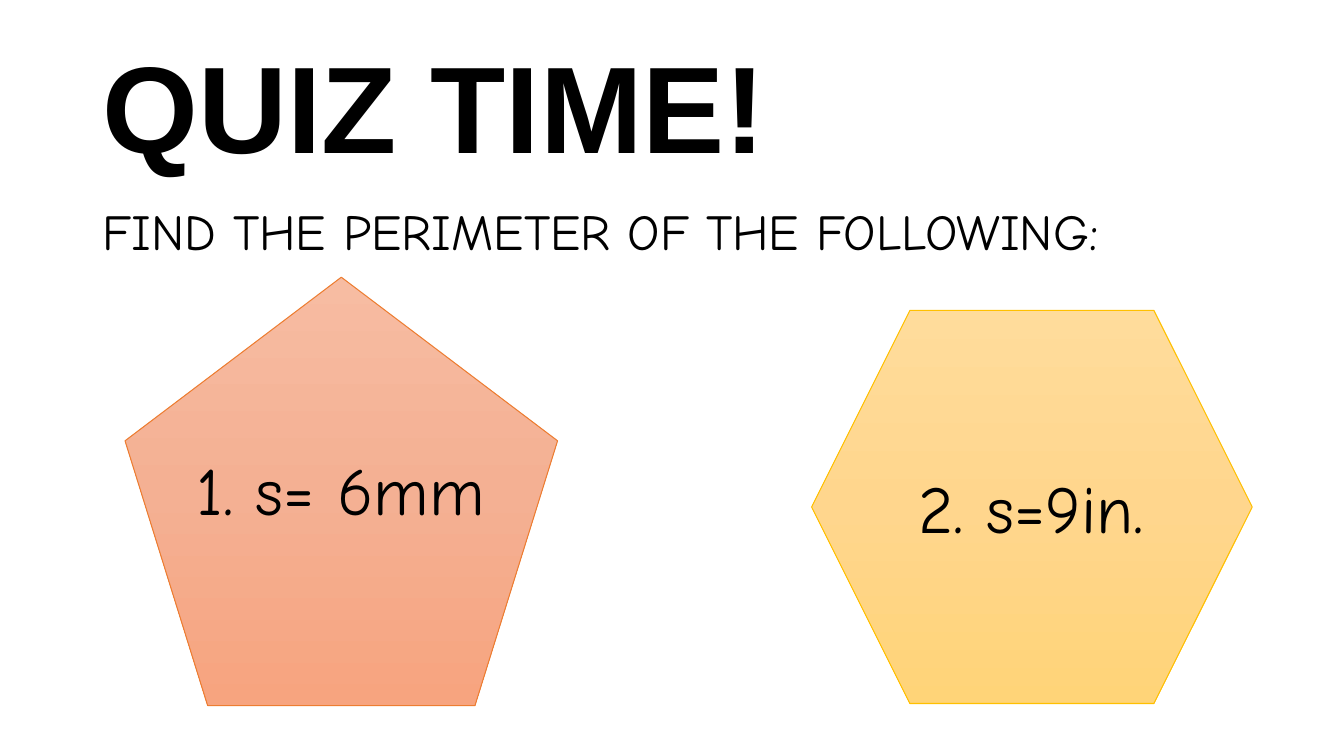
from copy import deepcopy

from pptx import Presentation
from pptx.dml.color import RGBColor
from pptx.enum.shapes import MSO_SHAPE as Shape
from pptx.enum.text import MSO_ANCHOR as Anchor, PP_ALIGN as Align
from pptx.oxml.ns import qn
from pptx.util import Inches, Pt


def color(hex_code):
    return RGBColor.from_string(hex_code)


def add_label(page, text, left, top, width, height, size, font="Comic Neue",
              bold=False, align=Align.LEFT, anchor=Anchor.TOP, spacing=1.0):
    box = page.shapes.add_textbox(Inches(left), Inches(top), Inches(width), Inches(height))
    frame = box.text_frame
    frame.word_wrap = True
    frame.vertical_anchor = anchor
    frame.text = text
    para = frame.paragraphs[0]
    para.alignment = align
    para.line_spacing = spacing
    span = para.runs[0]
    span.font.name = font
    span.font.size = Pt(size)
    span.font.bold = bold
    span.font.color.rgb = color("000000")


def add_polygon(page, kind, left, top, width, height, shades, outline):
    polygon = page.shapes.add_shape(kind, Inches(left), Inches(top), Inches(width), Inches(height))
    polygon.shadow.inherit = False
    polygon.line.color.rgb = color(outline)
    polygon.line.width = Pt(0.75)
    polygon.fill.gradient()
    polygon.fill.gradient_angle = 270
    stop_list = polygon.element.find(".//" + qn("a:gsLst"))
    stop_list.insert(1, deepcopy(stop_list[0]))
    for stop, position, shade in zip(polygon.fill.gradient_stops, (0, 0.5, 1), shades):
        stop.position = position
        stop.color.rgb = color(shade)


def main():
    deck = Presentation()
    deck.slide_width = Inches(13.33)
    deck.slide_height = Inches(7.5)
    page = deck.slides.add_slide(deck.slide_layouts[6])

    add_label(page, "QUIZ TIME!", 0.92, 0.4, 11.5, 1.45, 88, font="Arial",
              bold=True, anchor=Anchor.MIDDLE, spacing=0.9)
    add_label(page, "FIND THE PERIMETER OF THE FOLLOWING:", 0.92, 2, 11.5, 4.76, 36, spacing=0.9)

    add_polygon(page, Shape.REGULAR_PENTAGON, 1.24, 2.75, 4.29, 4.25,
                ("F7BCA2", "F4B093", "F7A47F"), "ED7D31")
    add_label(page, "1. s= 6mm", 1.5, 4.4, 3.76, 0.91, 48, align=Align.CENTER)

    add_polygon(page, Shape.HEXAGON, 8.05, 3.08, 4.37, 3.9,
                ("FFDC9B", "FFD68D", "FFD478"), "FFC000")
    add_label(page, "2. s=9in.", 8.35, 4.58, 3.76, 0.91, 48, align=Align.CENTER)

    deck.save("out.pptx")


if __name__ == "__main__":
    main()
